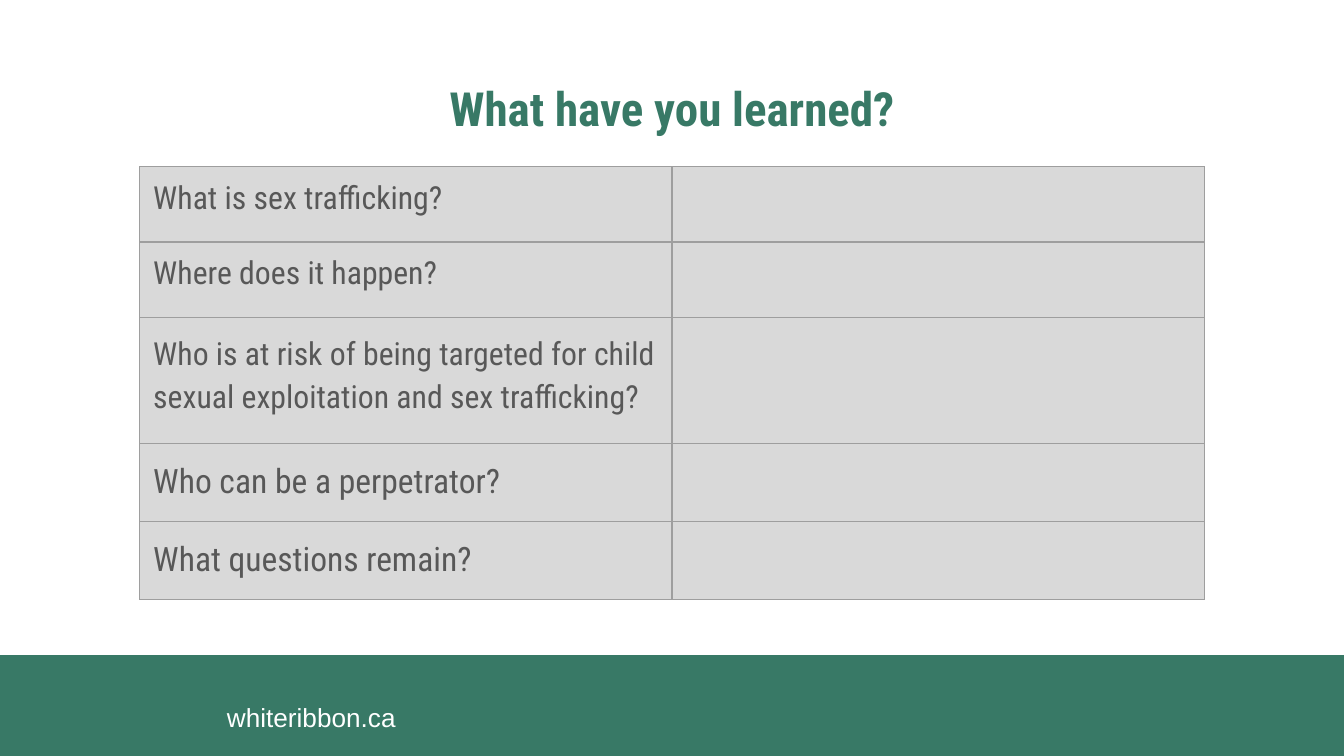
import pptx
import pptx.dml.color
import pptx.enum.shapes
import pptx.enum.text
import pptx.oxml
import pptx.oxml.ns
import pptx.util
from pptx.util import Inches

GREEN = pptx.dml.color.RGBColor(0x38, 0x79, 0x66)
WHITE = pptx.dml.color.RGBColor(0xFF, 0xFF, 0xFF)
TEXT_GREY = pptx.dml.color.RGBColor(0x58, 0x58, 0x58)
CELL_GREY = pptx.dml.color.RGBColor(0xD9, 0xD9, 0xD9)
BORDER_GREY = pptx.dml.color.RGBColor(0x9E, 0x9E, 0x9E)
HEADING_FONT = "Roboto Condensed"
INSET = 0.1

# A 16:9 slide
SLIDE_WIDTH = 10
SLIDE_HEIGHT = SLIDE_WIDTH * 9 / 16

# Question, text size, line spacing, row height
QUESTIONS = [
    ("What is sex trafficking?", 17, 1.0, 0.56),
    ("Where does it happen?", 17, 1.0, 0.56),
    ("Who is at risk of being targeted for child sexual exploitation "
     "and sex trafficking?", 17, 1.15, 0.94),
    ("Who can be a perpetrator?", 18, 1.15, 0.58),
    ("What questions remain?", 18, 1.15, 0.58),
]


def write_text(frame, text, *, size, color, font=HEADING_FONT, bold=False,
               align=pptx.enum.text.PP_ALIGN.LEFT, spacing=1.0):
    paragraph = frame.paragraphs[0]
    paragraph.alignment = align
    paragraph.line_spacing = spacing
    run = paragraph.add_run()
    run.text = text
    run.font.name = font
    run.font.size = pptx.util.Pt(size)
    run.font.bold = bold
    run.font.color.rgb = color


def set_insets(holder):
    holder.margin_left = holder.margin_right = Inches(INSET)
    holder.margin_top = holder.margin_bottom = Inches(INSET)


def set_borders(cell, color, points):
    properties = cell._tc.get_or_add_tcPr()
    for position, side in enumerate(("lnL", "lnR", "lnT", "lnB")):
        border = pptx.oxml.parse_xml(
            f'<a:{side} {pptx.oxml.ns.nsdecls("a")} w="{pptx.util.Pt(points)}">'
            f'<a:solidFill><a:srgbClr val="{color}"/></a:solidFill></a:{side}>')
        properties.insert(position, border)


def place_title(slide, left, top, width, height):
    title = slide.shapes.title
    title.left, title.top = Inches(left), Inches(top)
    title.width, title.height = Inches(width), Inches(height)
    frame = title.text_frame
    set_insets(frame)
    frame.word_wrap = True
    frame.auto_size = pptx.enum.text.MSO_AUTO_SIZE.NONE
    frame.vertical_anchor = pptx.enum.text.MSO_ANCHOR.TOP
    write_text(frame, "What have you learned?", size=25.2, color=GREEN,
               bold=True, align=pptx.enum.text.PP_ALIGN.CENTER)


def place_questions(slide, left, top, width):
    height = sum(row[-1] for row in QUESTIONS)
    table = slide.shapes.add_table(
        len(QUESTIONS), 2, Inches(left), Inches(top),
        Inches(width), Inches(height)).table
    table.first_row = table.horz_banding = False
    for column in table.columns:
        column.width = Inches(width / 2)

    for row, (question, size, spacing, row_height) in zip(table.rows, QUESTIONS):
        row.height = Inches(row_height)
        for cell in row.cells:
            set_insets(cell)
            cell.fill.solid()
            cell.fill.fore_color.rgb = CELL_GREY
            set_borders(cell, BORDER_GREY, 0.75)
        write_text(row.cells[0].text_frame, question, size=size,
                   color=TEXT_GREY, spacing=spacing)


def place_footer(slide, left, top, width, height):
    # Green band
    band = slide.shapes.add_shape(
        pptx.enum.shapes.MSO_SHAPE.RECTANGLE,
        Inches(left), Inches(top), Inches(width), Inches(height))
    band.shadow.inherit = False
    band.fill.solid()
    band.fill.fore_color.rgb = GREEN
    band.line.color.rgb = GREEN
    band.line.width = pptx.util.Pt(0.75)

    # Web address
    address = slide.shapes.add_textbox(
        Inches(left + 1.59), Inches(top + 0.24), Inches(1.54), Inches(0.42))
    frame = address.text_frame
    set_insets(frame)
    frame.word_wrap = True
    frame.auto_size = pptx.enum.text.MSO_AUTO_SIZE.SHAPE_TO_FIT_TEXT
    write_text(frame, "whiteribbon.ca", size=14, color=WHITE, font="Arial")


def main():
    presentation = pptx.Presentation()
    presentation.slide_width = Inches(SLIDE_WIDTH)
    presentation.slide_height = Inches(SLIDE_HEIGHT)
    slide = presentation.slides.add_slide(presentation.slide_layouts[5])
    band_top = 4.88
    place_footer(slide, 0, band_top, SLIDE_WIDTH, SLIDE_HEIGHT - band_top)
    place_title(slide, 0.34, 0.49, 9.32, 0.63)
    place_questions(slide, 1.04, 1.24, 7.92)
    presentation.save("out.pptx")


if __name__ == "__main__":
    main()
